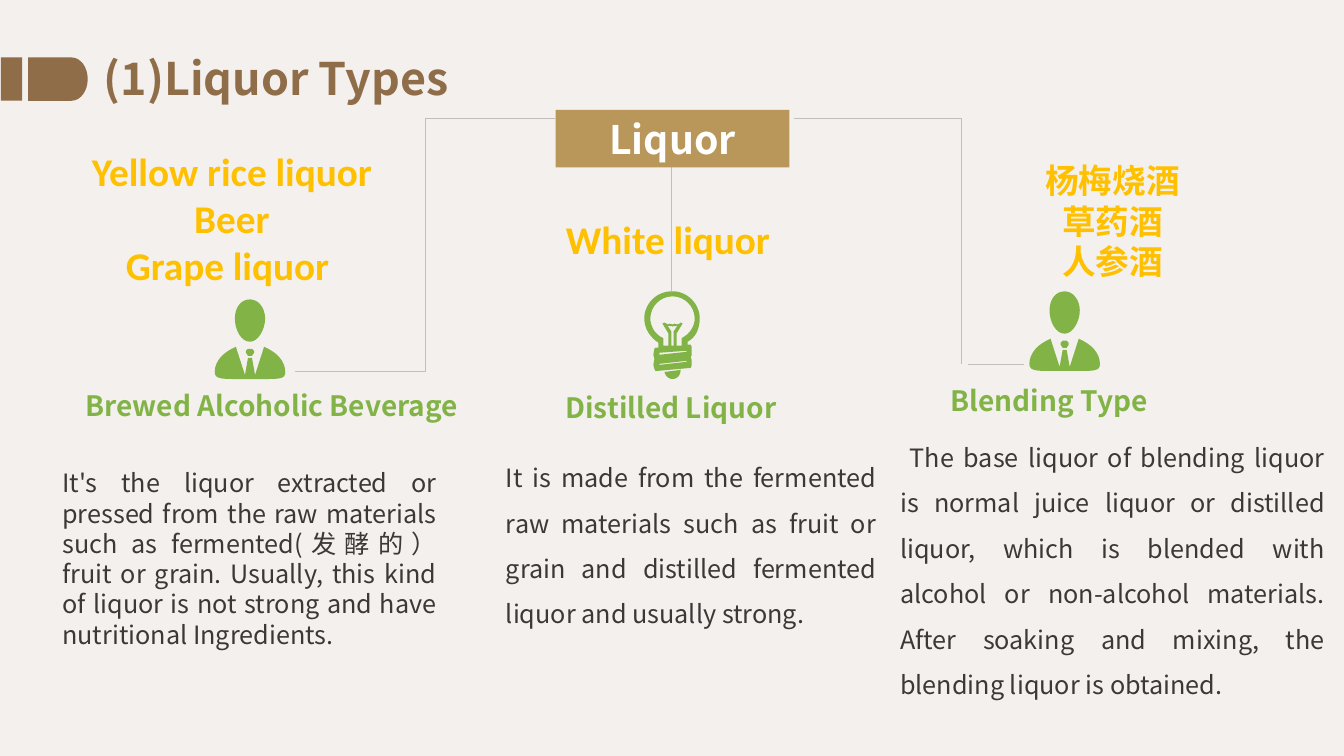
from lxml import etree
from pptx import Presentation
from pptx.dml.color import RGBColor
from pptx.enum import shapes, text
from pptx.oxml import ns
from pptx.util import Inches, Pt

CREAM = RGBColor(0xF4, 0xF0, 0xED)
BROWN = RGBColor(0x8E, 0x6D, 0x48)
TAN = RGBColor(0xB9, 0x96, 0x5A)
GREEN = RGBColor(0x82, 0xB3, 0x47)
GOLD = RGBColor(0xFF, 0xC0, 0x00)
INK = RGBColor(0x3B, 0x38, 0x38)
GREY = RGBColor(0xBF, 0xBF, 0xBF)
WHITE = RGBColor(0xFF, 0xFF, 0xFF)
SANS = "Noto Sans CJK SC"
LATIN = "Calibri"
LEFT, CENTER, JUSTIFY = (text.PP_ALIGN.LEFT, text.PP_ALIGN.CENTER,
                         text.PP_ALIGN.JUSTIFY)

# Icon contours in hundredths of an inch: pairs are corners,
# sixes are cubic curves (two handles and an end point).
PERSON = [
    [(70, 72), (70, 61, 61, 52, 49, 47), (40, 75), (37, 58), (33, 58), (30, 75),
     (21, 47), (9, 52, 0, 61, 0, 72), (0, 80, 8, 79, 35, 79),
     (64, 79, 70, 80, 70, 72)],
    [(37, 49), (33, 49), (31, 51), (31, 53), (33, 56), (37, 56), (39, 53), (39, 51)],
    [(35, 42), (43, 42, 50, 30, 50, 19), (50, 8, 43, 0, 35, 0),
     (26, 0, 20, 8, 20, 19), (20, 30, 26, 42, 35, 42)],
]
BULB = [
    [(28, 0), (35, 0, 42, 3, 47, 8), (52, 13, 55, 20, 55, 27),
     (55, 37, 51, 46, 43, 50), (43, 53), (46, 53), (47, 55), (47, 64), (46, 65),
     (47, 68), (47, 74), (46, 76), (13, 79), (11, 79), (10, 77), (9, 73),
     (10, 67), (9, 63), (10, 57), (11, 56), (14, 56), (14, 51),
     (6, 46, 0, 37, 0, 27), (0, 20, 3, 13, 8, 8), (13, 3, 20, 0, 28, 0)],
    [(22, 32), (23, 33, 24, 33, 25, 32), (27, 33, 29, 33, 30, 32),
     (31, 33, 34, 33, 35, 32), (36, 31), (38, 32), (32, 42), (32, 54), (37, 54),
     (37, 47), (38, 46), (45, 42, 50, 35, 50, 27), (50, 15, 40, 5, 28, 5),
     (16, 5, 6, 15, 6, 27), (6, 35, 11, 43, 18, 46), (19, 47), (19, 54),
     (24, 54), (24, 42), (18, 32), (20, 31)],
    [(33, 34), (31, 35, 29, 34, 28, 35), (27, 34, 25, 35, 23, 34), (27, 40),
     (27, 54), (29, 54), (29, 40)],
    [(36, 78), (20, 80), (21, 84, 24, 87, 28, 87), (33, 87, 36, 83, 36, 78)],
    [(42, 69), (15, 72), (15, 73), (42, 70)],
    [(42, 59), (15, 61), (15, 63), (42, 60)],
]
TAB = [[(0, 0), (43, 0), (52, 0, 59, 10, 59, 21.5), (59, 33, 52, 43, 43, 43), (0, 43)]]

# Icon with its corner, then (lines, box) of varieties, heading and description,
# with the size of the varieties and the line spacing of the description.
BRANCHES = [
    (PERSON, (2.13, 2.97),
     (["Yellow rice liquor", " Beer ", "Grape liquor "], (0.81, 1.41, 2.98, 1.51)), 28,
     ("Brewed Alcoholic Beverage", (0.75, 3.81, 4.29, 0.44)),
     ("It's the liquor extracted or pressed from the raw materials such as "
      "fermented(发酵的） fruit or grain. Usually, this kind of liquor is not strong "
      "and have nutritional Ingredients.", (0.52, 4.59, 3.91, 2.22)), 1),
    (BULB, (6.39, 2.89),
     (["White liquor"], (5.51, 2.09, 2.23, 0.57)), 28,
     ("Distilled Liquor", (5.51, 3.82, 3.09, 0.44)),
     ("It is made from the fermented raw materials such as fruit or grain and "
      "distilled fermented liquor and usually strong.", (4.92, 4.39, 3.87, 2.36)), 1.5),
    (PERSON, (10.21, 2.89),
     (["杨梅烧酒", "草药酒", "人参酒"], (10.27, 1.54, 1.53, 1.31)), 24,
     ("Blending Type", (9.33, 3.76, 2.65, 0.44)),
     (" The base liquor of blending liquor is normal juice liquor or distilled "
      "liquor, which is blended with alcohol or non-alcohol materials. After soaking "
      "and mixing, the blending liquor is obtained.", (8.83, 4.19, 4.41, 2.77)), 1.5),
]


def flatten(contour, steps=8):
    """Turn corners and cubic curves into points in thousandths of an inch."""
    points = []
    for node in contour:
        nodes = [10 * value for value in node]
        if len(nodes) == 2:
            points.append(tuple(nodes))
            continue
        x0, y0 = points[-1]
        x1, y1, x2, y2, x3, y3 = nodes
        for step in range(1, steps + 1):
            t = step / steps
            a, b, c, d = (1 - t) ** 3, 3 * t * (1 - t) ** 2, 3 * t * t * (1 - t), t ** 3
            points.append((a * x0 + b * x1 + c * x2 + d * x3,
                           a * y0 + b * y1 + c * y2 + d * y3))
    return points


def paint(shape, color):
    shape.shadow.inherit = False
    shape.fill.solid()
    shape.fill.fore_color.rgb = color
    shape.line.fill.background()


def add_outline(page, contours, corner, color):
    left, top = corner
    builder = None
    for contour in contours:
        start, *rest = flatten(contour)
        if builder is None:
            builder = page.shapes.build_freeform(*start, scale=Inches(0.01) / 10)
        else:
            builder.move_to(*start)
        builder.add_line_segments(rest, close=True)
    shape = builder.convert_to_shape(Inches(left), Inches(top))
    shape.left, shape.top = Inches(left), Inches(top)
    paint(shape, color)


def add_rectangle(page, box, color):
    shape = page.shapes.add_shape(shapes.MSO_SHAPE.RECTANGLE, *map(Inches, box))
    paint(shape, color)
    return shape


def write(frame, lines, size, color, bold=True, font=SANS, align=LEFT, spacing=1):
    for index, line in enumerate(lines):
        para = frame.paragraphs[0] if index == 0 else frame.add_paragraph()
        para.text = line
        para.alignment = align
        para.line_spacing = spacing
        para.font.size = Pt(size)
        para.font.bold = bold
        para.font.color.rgb = color
        para.font.name = font
        defaults = para._p.find(".//" + ns.qn("a:defRPr"))
        etree.SubElement(defaults, ns.qn("a:ea"), typeface=SANS)


def add_text(page, box, lines, size, color, wrap=True, **style):
    frame = page.shapes.add_textbox(*map(Inches, box)).text_frame
    frame.word_wrap = wrap
    write(frame, lines, size, color, **style)


def add_line(page, kind, start, end):
    line = page.shapes.add_connector(kind, *map(Inches, start + end))
    line.line.color.rgb = GREY
    line.line.width = Pt(0.5)
    etree.SubElement(line._element.spPr, ns.qn("a:effectLst"))
    return line


def add_header(page, box):
    left, top, width, height = box
    add_rectangle(page, (left, top + 0.12, 0.21, 0.43), BROWN)
    add_outline(page, TAB, (left + 0.27, top + 0.12), BROWN)
    title = page.shapes.title
    title.left, title.top = Inches(left + 0.92), Inches(top)
    title.width, title.height = Inches(width - 0.92), Inches(height)
    title.text_frame.auto_size = text.MSO_AUTO_SIZE.NONE
    title.text_frame.vertical_anchor = text.MSO_ANCHOR.TOP
    write(title.text_frame, ["(1)Liquor Types"], 32, BROWN)


def add_root(page, box):
    """Draw the root label and the lines that lead to the three branches."""
    left, top, width, height = box
    straight, elbow = shapes.MSO_CONNECTOR.STRAIGHT, shapes.MSO_CONNECTOR.ELBOW
    arm = top + 0.08
    add_line(page, elbow, (left, arm), (2.93, 3.68))
    middle = left + width / 2 - 0.01
    add_line(page, straight, (middle, top + height), (middle, 2.89))
    right = add_line(page, elbow, (left + width + 0.05, arm), (9.54, 3.61))
    right._element.spPr.find(ns.qn("a:prstGeom")).set("prst", "bentConnector2")
    add_line(page, straight, (9.6, 3.61), (10.16, 3.61))
    frame = add_rectangle(page, box, TAN).text_frame
    frame.vertical_anchor = text.MSO_ANCHOR.MIDDLE
    write(frame, ["Liquor"], 28, WHITE, align=CENTER)


def add_branch(page, icon, corner, varieties, size, heading, description, spacing):
    add_outline(page, icon, corner, GREEN)
    lines, box = varieties
    add_text(page, box, lines, size, GOLD, wrap=False, font=LATIN, align=CENTER)
    label, box = heading
    add_text(page, box, [label], 20, GREEN)
    body, box = description
    add_text(page, box, [body], 18, INK, bold=False, align=JUSTIFY, spacing=spacing)


def main():
    deck = Presentation()
    deck.slide_width, deck.slide_height = Inches(13.33), Inches(7.5)
    page = deck.slides.add_slide(deck.slide_layouts[5])
    page.background.fill.solid()
    page.background.fill.fore_color.rgb = CREAM
    add_header(page, (0.01, 0.45, 5.57, 0.64))
    add_root(page, (5.51, 1.09, 2.32, 0.57))
    for branch in BRANCHES:
        add_branch(page, *branch)
    deck.save("out.pptx")


if __name__ == "__main__":
    main()
